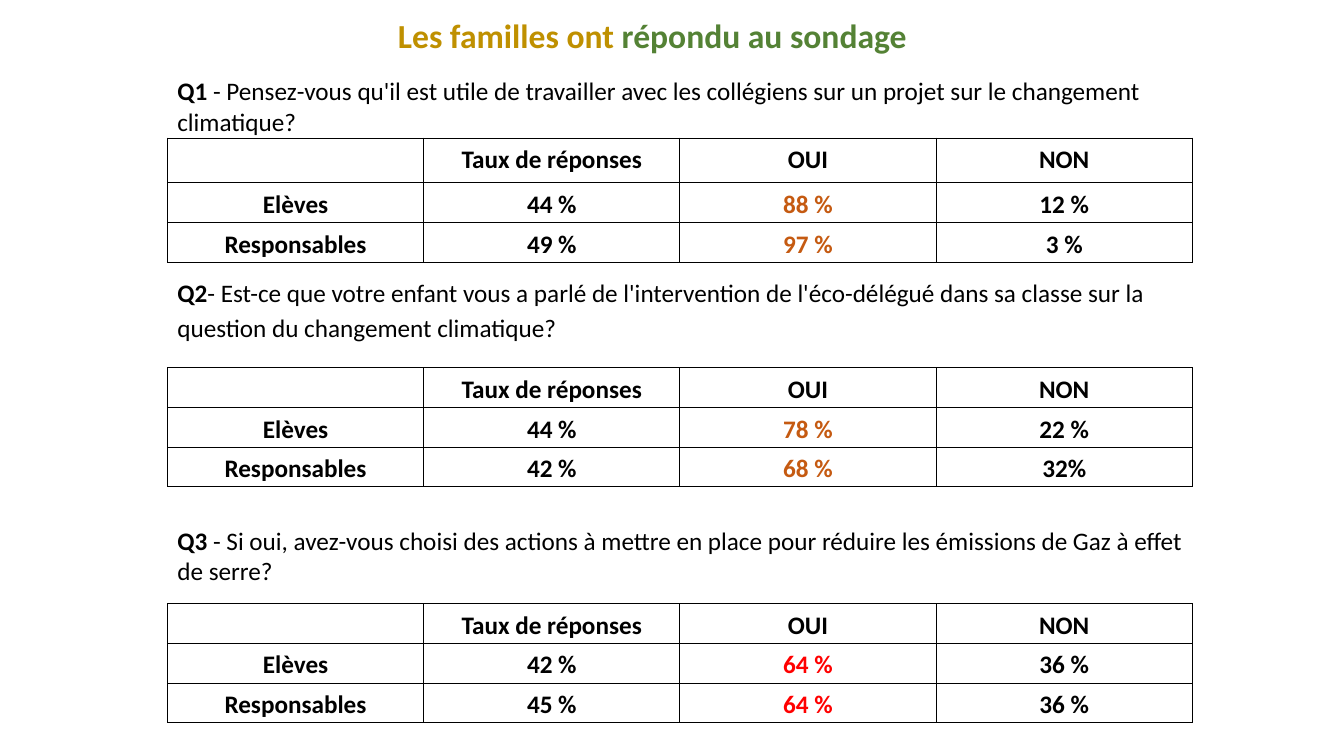
"""Build the survey slide: a title and three questions, each with its table."""
from lxml import etree
from pptx import Presentation
from pptx.dml.color import RGBColor
from pptx.enum import text
from pptx.oxml import ns
from pptx.util import Cm, Pt

INK = {"black": "000000", "gold": "BF9000", "green": "548235", "rust": "C55A11", "red": "FF0000"}
TITLE = [("Les familles ont ", True, "gold"), ("répondu au sondage", True, "green")]
HEAD = ["", "Taux de réponses", "OUI", "NON"]
POLLS = [
    {"name": "Q1",
     "lines": [" - Pensez-vous qu'il est utile de travailler avec les collégiens "
               "sur un projet sur le changement", "climatique?"],
     "rows": [["Elèves", "44 %", "88 %", "12 %"], ["Responsables", "49 %", "97 %", "3 %"]],
     "hue": "rust", "box": (1.78, 25.83, 1.8), "ls": None, "top": 3.48, "first": 1.13},
    {"name": "Q2",
     "lines": ["- Est-ce que votre enfant vous a parlé de l'intervention de l'éco-délégué "
               "dans sa classe sur la question du changement climatique?"],
     "rows": [["Elèves", "44 %", "78 %", "22 %"], ["Responsables", "42 %", "68 %", "32%"]],
     "hue": "rust", "box": (6.76, 25.83, 2.92), "ls": 1.15, "top": 9.27, "first": 1},
    {"name": "Q3",
     "lines": [" - Si oui, avez-vous choisi des actions à mettre en place pour réduire "
               "les émissions de Gaz à effet de serre?"],
     "rows": [["Elèves", "42 %", "64 %", "36 %"], ["Responsables", "45 %", "64 %", "36 %"]],
     "hue": "red", "box": (13.11, 26.16, 3.33), "ls": None, "top": 15.21, "first": 1},
]
LEFT, WIDE, ROW, PAD = 4.22, 25.83, 1, 0.05


def style(font, size, bold, hue):
    font.name, font.size, font.bold = "Calibri", Pt(size), bold
    font.color.rgb = RGBColor.from_string(INK[hue])


def write(para, runs, size=18, align=None, gap=None):
    para.alignment, para.line_spacing = align, gap
    for words, bold, hue in runs:
        run = para.add_run()
        run.text = words
        style(run.font, size, bold, hue)


def add_box(slide, left, top, wide, high):
    frame = slide.shapes.add_textbox(Cm(left), Cm(top), Cm(wide), Cm(high)).text_frame
    frame.word_wrap = True
    return frame


def edge(cell):
    props = cell._tc.get_or_add_tcPr()
    for spot, side in enumerate(("lnL", "lnR", "lnT", "lnB")):
        line = etree.Element(ns.qn("a:" + side), w=str(Pt(0.75)))
        fill = etree.SubElement(line, ns.qn("a:solidFill"))
        etree.SubElement(fill, ns.qn("a:srgbClr"), val=INK["black"])
        props.insert(spot, line)


def add_grid(slide, poll):
    data = [HEAD] + poll["rows"]
    highs = [poll["first"]] + [ROW] * len(poll["rows"])
    grid = slide.shapes.add_table(len(data), len(HEAD), Cm(LEFT), Cm(poll["top"]),
                                  Cm(WIDE), Cm(sum(highs))).table
    grid.first_row = grid.horz_banding = False
    for r, row in enumerate(data):
        grid.rows[r].height = Cm(highs[r])
        for c, words in enumerate(row):
            cell = grid.cell(r, c)
            cell.margin_left = cell.margin_right = Cm(PAD)
            cell.margin_top = cell.margin_bottom = Cm(PAD)
            cell.fill.background()
            edge(cell)
            hue = poll["hue"] if r and c == HEAD.index("OUI") else "black"
            runs = [(words, True, hue)] if words else []
            write(cell.text_frame.paragraphs[0], runs, align=text.PP_ALIGN.CENTER, gap=1.15)


def add_poll(slide, poll):
    top, wide, high = poll["box"]
    frame = add_box(slide, LEFT, top, wide, high)
    for i, line in enumerate(poll["lines"]):
        para = frame.add_paragraph() if i else frame.paragraphs[0]
        lead = [] if i else [(poll["name"], True, "black")]
        write(para, lead + [(line, False, "black")], gap=poll["ls"])


def main():
    deck = Presentation()
    deck.slide_width, deck.slide_height = Cm(33.87), Cm(19.05)
    slide = deck.slides.add_slide(deck.slide_layouts[6])
    for poll in POLLS:
        add_grid(slide, poll)
    for poll in POLLS:
        add_poll(slide, poll)
    frame = add_box(slide, 7.6, 0.25, 17.68, 1.28)
    write(frame.paragraphs[0], TITLE, size=24, align=text.PP_ALIGN.CENTER)
    deck.save("out.pptx")


if __name__ == "__main__":
    main()
